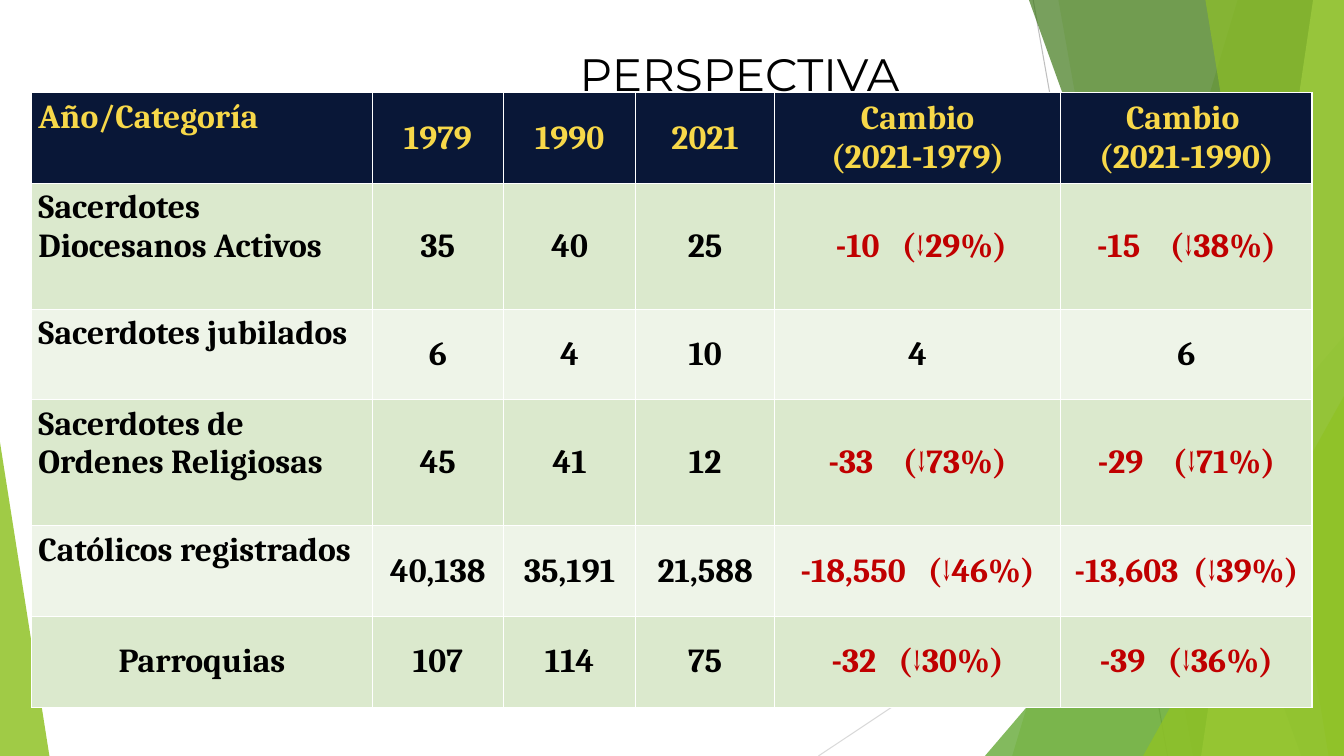
"""Build the slide comparing diocesan figures for 1979, 1990 and 2021."""
import lxml.etree
import pptx
import pptx.dml.color
import pptx.enum.shapes
import pptx.enum.text
import pptx.oxml.ns
import pptx.util

Pt = pptx.util.Pt
RGB = pptx.dml.color.RGBColor.from_string
qn = pptx.oxml.ns.qn
ALIGN = pptx.enum.text.PP_ALIGN
ANCHOR = pptx.enum.text.MSO_ANCHOR

THEME = {
    "title_font": "Montserrat", "title_size": 32.4,
    "table_font": "Cambria", "table_size": 24,
    "ink": "000000", "fall": "C00000", "heading": "F7D849",
    "header_fill": "091737", "bands": ["DBE9CD", "EEF4E8"], "border": "FFFFFF",
    "lime": "90C226", "green": "54A021", "forest": "3F7819", "pale": "C0E474",
    "rule_dark": "BFBFBF", "rule_light": "D9D9D9",
}
WIDTH, HEIGHT = 960, 540


def write(para, text, font, size, colour, bold, align):
    """Add one formatted run to a paragraph."""
    para.alignment = align
    span = para.add_run()
    span.text = text
    span.font.color.rgb = RGB(THEME[colour])
    for name, value in {"name": THEME[font], "size": Pt(THEME[size]), "bold": bold}.items():
        setattr(span.font, name, value)


def tint(shape, colour, opacity):
    """Give a shape a translucent fill with no line or shadow."""
    shape.shadow.inherit = False
    shape.line.fill.background()
    shape.fill.solid()
    shape.fill.fore_color.rgb = RGB(THEME[colour])
    swatch = shape._element.spPr.find(f"{qn('a:solidFill')}/{qn('a:srgbClr')}")
    lxml.etree.SubElement(swatch, qn("a:alpha"), val=str(opacity * 1000))


deck = pptx.Presentation()
deck.slide_width, deck.slide_height = Pt(WIDTH), Pt(HEIGHT)
page = deck.slides.add_slide(deck.slide_layouts[6])

rules = [(738, 0, 834, 540, "rule_dark"), (960, 290, 584.6, 540, "rule_light")]
for x1, y1, x2, y2, colour in rules:
    rule = page.shapes.add_connector(
        pptx.enum.shapes.MSO_CONNECTOR.STRAIGHT, Pt(x1), Pt(y1), Pt(x2), Pt(y2))
    rule.line.width = Pt(0.75)
    rule.line.color.rgb = RGB(THEME[colour])
    lxml.etree.SubElement(rule._element.spPr, qn("a:effectLst"))

facets = [
    ("panel", (884, 723), "lime", 30),
    ("panel", (756, 852), "lime", 20),
    ("triangle", (703.5, 240, 256.5, 1), "green", 72),
    ("panel", (735, 929.5), "forest", 70),
    ("panel", (938, 858), "pale", 70),
    ("panel", (861, 949), "lime", 65),
    ("triangle", (816.5, 283, 143.5, 1), "lime", 80),
    ("triangle", (0, 316, 35.3, 0), "lime", 85),
]
for kind, place, colour, opacity in facets:
    if kind == "panel":
        top_x, bottom_x = place
        outline = page.shapes.build_freeform(Pt(top_x), Pt(0))
        corners = [(WIDTH, 0), (WIDTH, HEIGHT), (bottom_x, HEIGHT)]
        outline.add_line_segments([(Pt(x), Pt(y)) for x, y in corners], close=True)
        facet = outline.convert_to_shape()
    else:
        left, top, width, apex = place
        facet = page.shapes.add_shape(
            pptx.enum.shapes.MSO_SHAPE.ISOSCELES_TRIANGLE,
            Pt(left), Pt(top), Pt(width), Pt(HEIGHT - top))
        facet.adjustments[0] = apex
    tint(facet, colour, opacity)

title = page.shapes.add_textbox(Pt(407), Pt(27.4), Pt(409), Pt(50.4))
title.text_frame.word_wrap = True
title.text_frame.vertical_anchor = ANCHOR.MIDDLE
write(title.text_frame.paragraphs[0], "PERSPECTIVA",
      "title_font", "title_size", "ink", False, ALIGN.LEFT)

rows = [
    ["Año/Categoría", "1979", "1990", "2021", "Cambio\n(2021-1979)", "Cambio \n(2021-1990)"],
    ["Sacerdotes Diocesanos Activos", "35", "40", "25", " -10   (↓29%)", "-15    (↓38%)"],
    ["Sacerdotes jubilados", "6", "4", "10", "4", "6"],
    ["Sacerdotes de Ordenes Religiosas", "45", "41", "12", "-33    (↓73%)", "-29    (↓71%)"],
    ["Católicos registrados", "40,138", "35,191", "21,588", "-18,550   (↓46%)", "-13,603  (↓39%)"],
    ["Parroquias", "107", "114", "75", "-32   (↓30%)", "-39   (↓36%)"],
]
column_widths = [243.5, 93.6, 94.6, 99, 204.5, 179.5]
row_heights = [62.6, 90, 64.5, 90, 64.8, 64.8]

table = page.shapes.add_table(
    len(rows), len(column_widths), Pt(22.5), Pt(66.3),
    Pt(sum(column_widths)), Pt(sum(row_heights))).table
table.first_row = table.horz_banding = False
for column, width in zip(table.columns, column_widths):
    column.width = Pt(width)
for row, height in zip(table.rows, row_heights):
    row.height = Pt(height)

for r, values in enumerate(rows):
    for c, value in enumerate(values):
        cell = table.cell(r, c)
        is_label = c == 0 and value != "Parroquias"
        cell_format = {
            "margin_left": Pt(5), "margin_right": Pt(5),
            "margin_top": Pt(3.6), "margin_bottom": Pt(3.6),
            "vertical_anchor": ANCHOR.TOP if is_label else ANCHOR.MIDDLE,
        }
        for name, setting in cell_format.items():
            setattr(cell, name, setting)

        properties = cell._tc.get_or_add_tcPr()
        for side in ("a:lnL", "a:lnR", "a:lnT", "a:lnB"):
            border = lxml.etree.SubElement(properties, qn(side), w=str(Pt(1)))
            paint = lxml.etree.SubElement(border, qn("a:solidFill"))
            lxml.etree.SubElement(paint, qn("a:srgbClr"), val=THEME["border"])
        cell.fill.solid()
        cell.fill.fore_color.rgb = RGB(
            THEME["header_fill"] if r == 0 else THEME["bands"][(r - 1) % 2])

        colour = "heading" if r == 0 else "fall" if "↓" in value else "ink"
        for number, line in enumerate(value.split("\n")):
            frame = cell.text_frame
            para = frame.add_paragraph() if number else frame.paragraphs[0]
            write(para, line, "table_font", "table_size", colour, True,
                  ALIGN.LEFT if is_label else ALIGN.CENTER)

deck.save("out.pptx")
